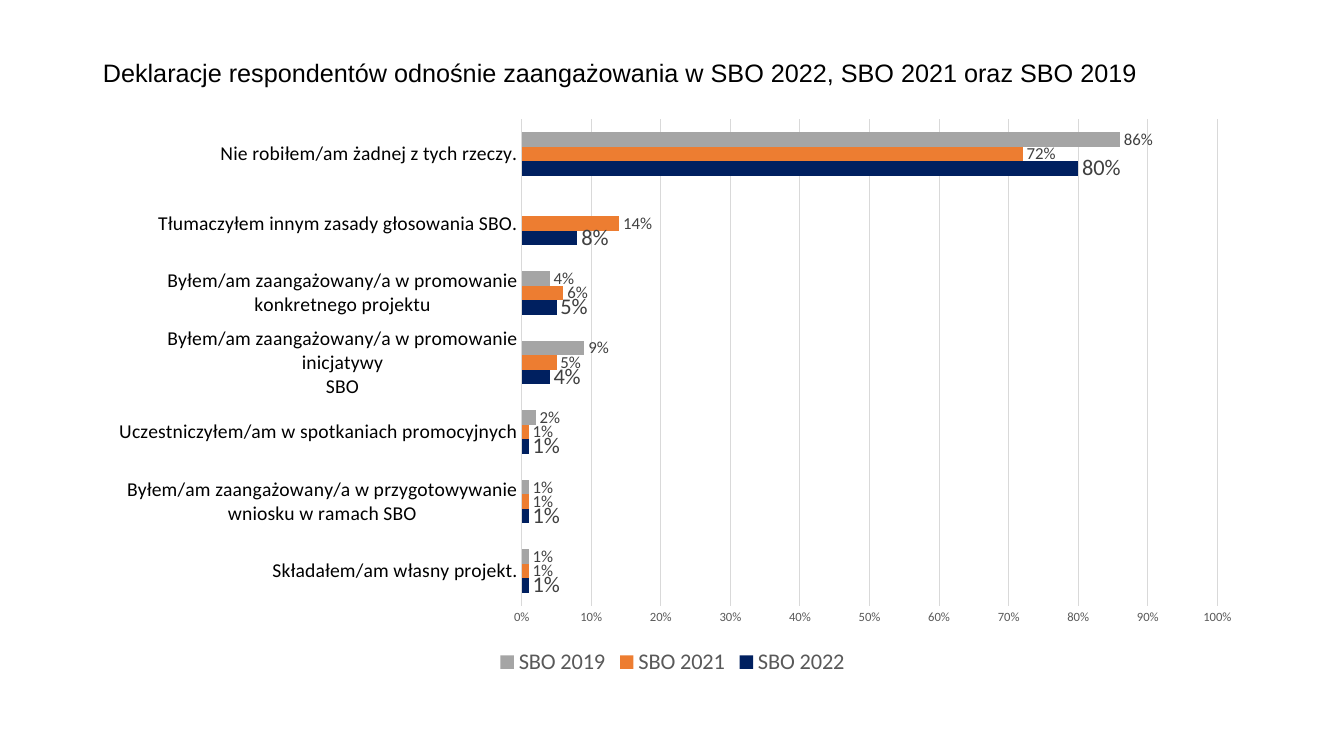
from lxml import etree
from pptx import Presentation
from pptx.chart.data import CategoryChartData
from pptx.dml.color import RGBColor
from pptx.enum import chart as kinds, text
from pptx.oxml.ns import qn
from pptx.util import Inches, Pt

# Content
TITLE = "Deklaracje respondentów odnośnie zaangażowania w SBO 2022, SBO 2021 oraz SBO 2019"
COLORS = {"black": "000000", "label": "404040", "axis": "595959", "grid": "D9D9D9",
          "navy": "002060", "orange": "ED7D31", "gray": "A5A5A5"}
SERIES = [("SBO 2022", "navy", 16), ("SBO 2021", "orange", 12), ("SBO 2019", "gray", 12)]
# Answer, then one share per series, from the bottom of the chart up
ROWS = [
    ("Składałem/am własny projekt.", 0.01, 0.01, 0.01),
    ("Byłem/am zaangażowany/a w przygotowywanie\nwniosku w ramach SBO", 0.01, 0.01, 0.01),
    ("Uczestniczyłem/am w spotkaniach promocyjnych", 0.01, 0.01, 0.02),
    ("Byłem/am zaangażowany/a w promowanie inicjatywy\nSBO", 0.04, 0.05, 0.09),
    ("Byłem/am zaangażowany/a w promowanie\nkonkretnego projektu", 0.05, 0.06, 0.04),
    ("Tłumaczyłem innym zasady głosowania SBO.", 0.08, 0.14, None),
    ("Nie robiłem/am żadnej z tych rzeczy.", 0.8, 0.72, 0.86),
]
# Plot area as shares of the chart frame
PLOT = {"x": 0.37, "y": 0.02, "w": 0.6, "h": 0.85}


def color(name):
    return RGBColor.from_string(COLORS[name])


def style(font, size, name, face="Calibri"):
    font.size, font.name, font.bold = Pt(size), face, False
    font.color.rgb = color(name)


def rule(line):
    line.color.rgb = color("grid")
    line.width = Pt(0.75)


def place(chart):
    """Fix the inner plot area within the chart frame."""
    area = chart.plots[0]._element.getparent()
    old = area.find(qn("c:layout"))
    if old is not None:
        area.remove(old)
    layout = etree.Element(qn("c:layout"))
    area.insert(0, layout)
    manual = etree.SubElement(layout, qn("c:manualLayout"))
    parts = [("layoutTarget", "inner"), ("xMode", "edge"), ("yMode", "edge"), *PLOT.items()]
    for tag, value in parts:
        etree.SubElement(manual, qn("c:" + tag)).set("val", str(value))


# Slide
deck = Presentation()
deck.slide_width, deck.slide_height = Inches(13.33), Inches(7.5)
slide = deck.slides.add_slide(deck.slide_layouts[5])

# Title
title = slide.shapes.title
title.left, title.top, title.width, title.height = map(Inches, (0.92, 0.4, 12.01, 0.67))
title.text_frame.text = TITLE
title.text_frame.vertical_anchor = text.MSO_ANCHOR.MIDDLE
para = title.text_frame.paragraphs[0]
para.alignment, para.line_spacing = text.PP_ALIGN.LEFT, 0.9
style(para.font, 18, "black", "Arial")

# Chart
names, *shares = zip(*ROWS)
data = CategoryChartData(number_format="0%")
data.categories = names
for (name, _, _), vals in zip(SERIES, shares):
    data.add_series(name, vals)
frame = slide.shapes.add_chart(kinds.XL_CHART_TYPE.BAR_CLUSTERED,
                               *map(Inches, (0.92, 1.07, 11.5, 5.68)), data)
chart = frame.chart
chart.has_title = False
style(chart.font, 10, "black")
place(chart)

# Bars and their labels
plot = chart.plots[0]
plot.gap_width, plot.overlap, plot.vary_by_categories = 182, 0, False
for bar, (_, fill, size) in zip(plot.series, SERIES):
    bar.format.fill.solid()
    bar.format.fill.fore_color.rgb = color(fill)
    bar.invert_if_negative = False
    labels = bar.data_labels
    labels.show_value = True
    labels.number_format, labels.number_format_is_linked = "0%", False
    labels.position = kinds.XL_LABEL_POSITION.OUTSIDE_END
    style(labels.font, size, "label")

# Axes
cats, vals = chart.category_axis, chart.value_axis
for axis, size, name in ((cats, 14, "black"), (vals, 9, "axis")):
    axis.major_tick_mark = axis.minor_tick_mark = kinds.XL_TICK_MARK.NONE
    style(axis.tick_labels.font, size, name)
rule(cats.format.line)
vals.format.line.fill.background()
vals.minimum_scale, vals.maximum_scale, vals.major_unit = 0, 1, 0.1
vals.tick_labels.number_format = "0%"
vals.tick_labels.number_format_is_linked = False
vals.has_major_gridlines = True
rule(vals.major_gridlines.format.line)

# Legend
chart.has_legend = True
chart.legend.position = kinds.XL_LEGEND_POSITION.BOTTOM
chart.legend.include_in_layout = False
style(chart.legend.font, 16, "axis")

deck.save("out.pptx")
